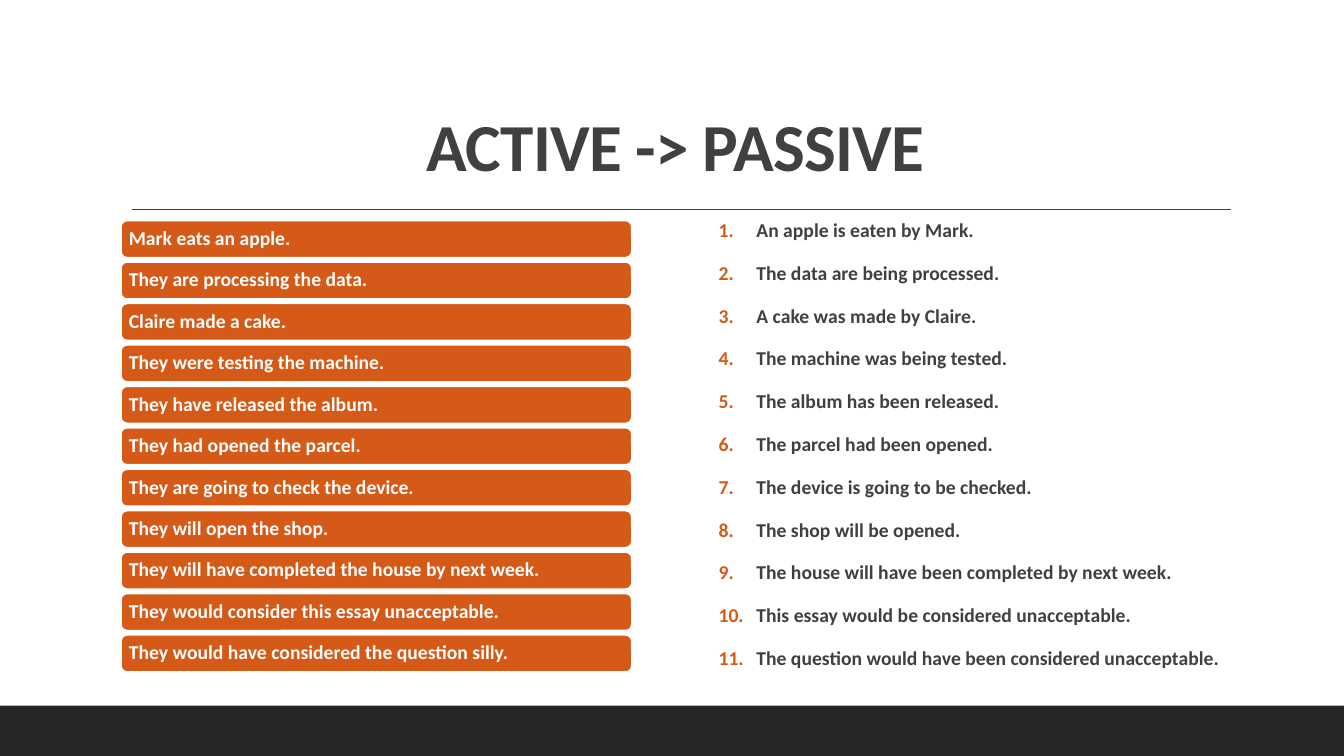
import dataclasses

import pptx
import pptx.dml.color
import pptx.enum.shapes
import pptx.enum.text
import pptx.oxml
import pptx.oxml.ns
import pptx.util

Pt = pptx.util.Pt
Shapes = pptx.enum.shapes.MSO_SHAPE
Anchor = pptx.enum.text.MSO_ANCHOR
Align = pptx.enum.text.PP_ALIGN


@dataclasses.dataclass(frozen=True)
class Theme:
    font: str = "Calibri"
    ink: str = "404040"
    accent: str = "D55917"
    light: str = "FFFFFF"
    band: str = "262626"
    title_size: int = 48
    text_size: int = 14


THEME = Theme()
PAGE_WIDTH, PAGE_HEIGHT = 960, 540
BAR_TOP, BAR_PITCH, BAR_HEIGHT = 157.5, 29.6, 26.6

SENTENCES = [
    ("Mark eats an apple.", "An apple is eaten by Mark."),
    ("They are processing the data.", "The data are being processed."),
    ("Claire made a cake.", "A cake was made by Claire."),
    ("They were testing the machine.", "The machine was being tested."),
    ("They have released the album.", "The album has been released."),
    ("They had opened the parcel.", "The parcel had been opened."),
    ("They are going to check the device.", "The device is going to be checked."),
    ("They will open the shop.", "The shop will be opened."),
    ("They will have completed the house by next week.",
     "The house will have been completed by next week."),
    ("They would consider this essay unacceptable.",
     "This essay would be considered unacceptable."),
    ("They would have considered the question silly.",
     "The question would have been considered unacceptable."),
]


def rgb(color):
    return pptx.dml.color.RGBColor.from_string(color)


def place(box, left, top, width, height):
    box.left, box.top, box.width, box.height = map(Pt, (left, top, width, height))


def set_frame(frame, anchor, side, edge):
    """Fix the text anchor and the side and top/bottom margins."""
    frame.word_wrap = True
    frame.auto_size = pptx.enum.text.MSO_AUTO_SIZE.NONE
    frame.vertical_anchor = anchor
    frame.margin_left = frame.margin_right = Pt(side)
    frame.margin_top = frame.margin_bottom = Pt(edge)


def add_span(para, text, size, color):
    span = para.add_run()
    span.text = text
    span.font.name = THEME.font
    span.font.size = Pt(size)
    span.font.bold = True
    span.font.color.rgb = rgb(color)
    return span


def add_block(page, preset, left, top, width, height, color):
    block = page.shapes.add_shape(preset, Pt(left), Pt(top), Pt(width), Pt(height))
    block.shadow.inherit = False
    block.fill.solid()
    block.fill.fore_color.rgb = rgb(color)
    block.line.fill.background()
    return block


def add_rule(page, left, right, y):
    rule = page.shapes.add_connector(
        pptx.enum.shapes.MSO_CONNECTOR.STRAIGHT, Pt(left), Pt(y), Pt(right), Pt(y))
    rule.line.color.rgb = rgb(THEME.ink)
    rule.line.width = Pt(1)
    rule._element.spPr.append(pptx.oxml.parse_xml(
        f'<a:effectLst {pptx.oxml.ns.nsdecls("a")}/>'))


def fill_title(title, text):
    place(title, 86.4, 22.3, 792, 114.5)
    set_frame(title.text_frame, Anchor.BOTTOM, 7.2, 3.6)
    para = title.text_frame.paragraphs[0]
    para.alignment = Align.CENTER
    para.line_spacing = 0.9
    span = add_span(para, text, THEME.title_size, THEME.ink)
    span.font._element.set("spc", "-50")


def add_bar(page, top, text):
    bar = add_block(page, Shapes.ROUNDED_RECTANGLE, 86.4, top, 365, BAR_HEIGHT,
                    THEME.accent)
    bar.line.color.rgb = rgb(THEME.light)
    bar.line.width = Pt(1.25)
    set_frame(bar.text_frame, Anchor.MIDDLE, 4.4, 4.2)
    para = bar.text_frame.paragraphs[0]
    para.alignment = Align.LEFT
    para.line_spacing = 0.9
    add_span(para, text, THEME.text_size, THEME.light)


def number_paragraph(para):
    """Give the paragraph an automatic coloured number and a hanging indent."""
    properties = para._p.get_or_add_pPr()
    properties.set("marL", str(Pt(27)))
    properties.set("indent", str(-Pt(27)))
    namespace = pptx.oxml.ns.nsdecls("a")
    for bullet in (
        f'<a:buClr {namespace}><a:srgbClr val="{THEME.accent}"/></a:buClr>',
        f'<a:buFont {namespace} typeface="{THEME.font}"/>',
        f'<a:buAutoNum {namespace} type="arabicPeriod"/>',
    ):
        properties.append(pptx.oxml.parse_xml(bullet))


def fill_numbered_list(body, items):
    place(body, 513.3, 152, 365, 349)
    frame = body.text_frame
    set_frame(frame, Anchor.TOP, 0, 3.6)
    for index, item in enumerate(items):
        para = frame.add_paragraph() if index else frame.paragraphs[0]
        para.alignment = Align.LEFT
        para.line_spacing = 1.0
        para.space_before = Pt(11.75)
        para.space_after = Pt(2)
        number_paragraph(para)
        add_span(para, item, THEME.text_size, THEME.ink)


def main():
    deck = pptx.Presentation()
    deck.slide_width, deck.slide_height = Pt(PAGE_WIDTH), Pt(PAGE_HEIGHT)
    page = deck.slides.add_slide(deck.slide_layouts[1])

    add_block(page, Shapes.RECTANGLE, 0, 504, PAGE_WIDTH, 36, THEME.band)
    add_rule(page, 94.3, 879, 149.5)
    fill_title(page.shapes.title, "ACTIVE -> PASSIVE")
    for index, (active, _) in enumerate(SENTENCES):
        add_bar(page, BAR_TOP + index * BAR_PITCH, active)
    fill_numbered_list(page.placeholders[1], [passive for _, passive in SENTENCES])

    deck.save("out.pptx")


if __name__ == "__main__":
    main()
